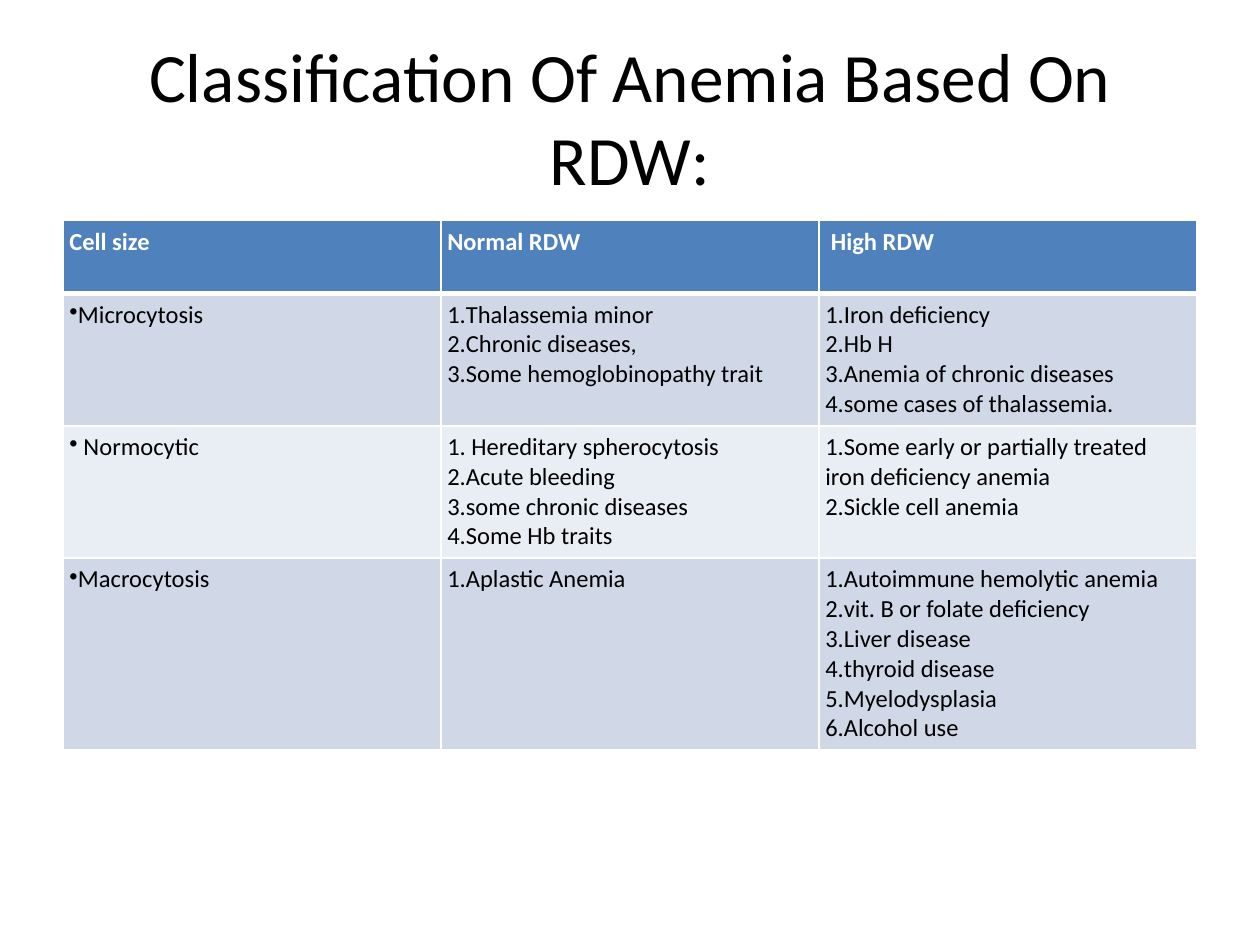
from lxml.etree import SubElement as Sub
from pptx import Presentation
from pptx.dml.color import RGBColor
from pptx.enum.text import MSO_ANCHOR as Anchor, PP_ALIGN as Align
from pptx.oxml.ns import qn
from pptx.util import Inches, Pt

WIDE, HIGH = 10, 7.5
LEFT, SPAN = 0.05 * WIDE, 0.9 * WIDE
ROWS = [0.58, 1.05, 1.05, 1.52]
FILLS = ["4F81BD", "D0D8E8", "E9EDF4", "D0D8E8"]
PAD = Inches(0.05)

HEAD = ["Cell size", "Normal RDW", " High RDW"]
BODY = [
    [["Microcytosis"],
     ["Thalassemia minor", "Chronic diseases,", "Some hemoglobinopathy trait"],
     ["Iron deficiency", "Hb H", "Anemia of chronic diseases",
      "some cases of thalassemia."]],
    [[" Normocytic"],
     [" Hereditary spherocytosis", "Acute bleeding",
      "some chronic diseases", "Some Hb traits"],
     ["Some early or partially treated iron deficiency anemia",
      "Sickle cell anemia"]],
    [["Macrocytosis"],
     ["Aplastic Anemia"],
     ["Autoimmune hemolytic anemia", "vit. B or folate deficiency",
      "Liver disease", "thyroid disease", "Myelodysplasia", "Alcohol use"]],
]


def color(code):
    return RGBColor.from_string(code)


def style(font, size, code, bold=False):
    for key, val in {"name": "Calibri", "size": Pt(size), "bold": bold}.items():
        setattr(font, key, val)
    font.color.rgb = color(code)


def bullet(para, col):
    """Dot in the first column, numbers in the others."""
    props = para._p.get_or_add_pPr()
    if col == 0:
        Sub(props, qn("a:buChar"), char="•")
    else:
        Sub(props, qn("a:buAutoNum"), type="arabicPeriod")


def border(cell, base):
    """White lines; the bottom one has its own width."""
    props = cell._tc.get_or_add_tcPr()
    for spot, side in enumerate("LRTB"):
        width = base if side == "B" else 1
        line = Sub(props, qn(f"a:ln{side}"), w=str(Pt(width)))
        Sub(Sub(line, qn("a:solidFill")), qn("a:srgbClr"), val="FFFFFF")
        props.insert(spot, line)


def add_title(slide, text):
    title = slide.shapes.title
    spots = {"left": LEFT, "top": 0.04 * HIGH, "width": SPAN, "height": 1.25}
    for key, val in spots.items():
        setattr(title, key, Inches(val))
    frame = title.text_frame
    frame.text = text
    frame.vertical_anchor = Anchor.MIDDLE
    para = frame.paragraphs[0]
    para.alignment = Align.CENTER
    style(para.runs[0].font, 39.6, "000000")


def fill_cell(cell, lines, row, col):
    for side in ("left", "right", "top", "bottom"):
        setattr(cell, f"margin_{side}", PAD)
    cell.fill.solid()
    cell.fill.fore_color.rgb = color(FILLS[row])
    border(cell, 1 if row else 3)
    frame = cell.text_frame
    for num, text in enumerate(lines):
        para = frame.add_paragraph() if num else frame.paragraphs[0]
        if row:
            bullet(para, col)
        run = para.add_run()
        run.text = text
        style(run.font, 14, "000000" if row else "FFFFFF", not row)


def add_grid(slide):
    data = [[[text] for text in HEAD]] + BODY
    grid = slide.shapes.add_table(
        len(data), len(HEAD), Inches(LEFT), Inches(1.75),
        Inches(SPAN), Inches(sum(ROWS))).table
    for row, cells in enumerate(data):
        grid.rows[row].height = Inches(ROWS[row])
        for col, lines in enumerate(cells):
            fill_cell(grid.cell(row, col), lines, row, col)


def main():
    deck = Presentation()
    deck.slide_width, deck.slide_height = Inches(WIDE), Inches(HIGH)
    slide = deck.slides.add_slide(deck.slide_layouts[5])
    add_title(slide, "Classification Of Anemia Based On RDW:")
    add_grid(slide)
    deck.save("out.pptx")


if __name__ == "__main__":
    main()
